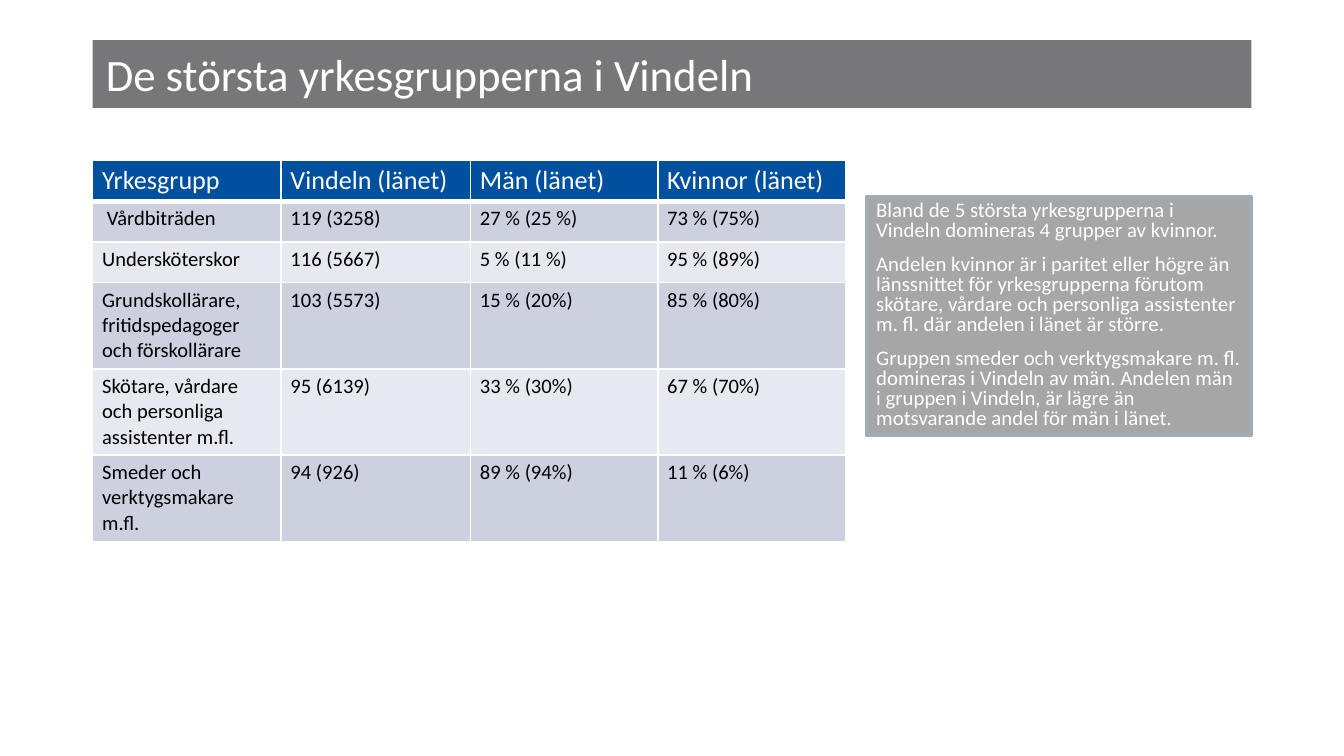
"""Build a slide on the largest occupational groups in Vindeln."""
from lxml import etree
from pptx import Presentation
from pptx.dml.color import RGBColor
from pptx.enum.shapes import MSO_SHAPE
from pptx.enum.text import MSO_ANCHOR, PP_ALIGN
from pptx.oxml.ns import qn
from pptx.util import Cm, Pt

RECTANGLE = MSO_SHAPE.RECTANGLE
TOP, MIDDLE = MSO_ANCHOR.TOP, MSO_ANCHOR.MIDDLE
LEFT_ALIGNED = PP_ALIGN.LEFT

WHITE = RGBColor(0xFF, 0xFF, 0xFF)
BLACK = RGBColor(0x00, 0x00, 0x00)
TITLE_GREY = RGBColor(0x77, 0x77, 0x7A)
NOTE_GREY = RGBColor(0xA6, 0xA6, 0xA6)
NOTE_EDGE = RGBColor(0xA3, 0xAB, 0xB6)
HEADER_BLUE = RGBColor(0x00, 0x50, 0xA0)
BANDS = [RGBColor(0xE7, 0xE9, 0xF0), RGBColor(0xCC, 0xD0, 0xDF)]
FONT = "Calibri"

TITLE = "De största yrkesgrupperna i Vindeln"
ROWS = [
    ("Yrkesgrupp", "Vindeln (länet)", "Män (länet)", "Kvinnor (länet)"),
    (" Vårdbiträden", "119 (3258)", "27 % (25 %)", "73 % (75%)"),
    ("Undersköterskor", "116 (5667)", "5 % (11 %)", "95 % (89%)"),
    ("Grundskollärare, fritidspedagoger och förskollärare",
     "103 (5573)", "15 % (20%)", "85 % (80%)"),
    ("Skötare, vårdare och personliga assistenter m.fl.",
     "95 (6139)", "33 % (30%)", "67 % (70%)"),
    ("Smeder och verktygsmakare m.fl.", "94 (926)", "89 % (94%)", "11 % (6%)"),
]
NOTES = [
    "Bland de 5 största yrkesgrupperna i Vindeln domineras 4 grupper av kvinnor.",
    "Andelen kvinnor är i paritet eller högre än länssnittet för yrkesgrupperna "
    "förutom skötare, vårdare och personliga assistenter m. fl. där andelen i "
    "länet är större.",
    "Gruppen smeder och verktygsmakare m. fl. domineras i Vindeln av män. "
    "Andelen män i gruppen i Vindeln, är lägre än motsvarande andel för män i länet.",
]

MARGIN, CONTENT_WIDTH = 1.75, 21.9
COLUMN_WIDTHS = [3.56, 3.58, 3.54, 3.56]
SHORT_ROW, TALL_ROW = 0.77, 1.63
ROW_HEIGHTS = [SHORT_ROW] * 3 + [TALL_ROW] * 3
NOTE_WIDTH = 7.27
INSET_X, INSET_Y = Cm(0.18), Cm(0.09)


def style_paragraph(paragraph, size, color):
    paragraph.alignment = LEFT_ALIGNED
    for span in paragraph.runs:
        span.font.name = FONT
        span.font.size = Pt(size)
        span.font.bold = False
        span.font.color.rgb = color


def set_insets(target):
    target.margin_left = target.margin_right = INSET_X
    target.margin_top = target.margin_bottom = INSET_Y


def add_panel(page, left, top, width, height, fill, anchor):
    panel = page.shapes.add_shape(RECTANGLE, Cm(left), Cm(top), Cm(width), Cm(height))
    panel.shadow.inherit = False
    panel.fill.solid()
    panel.fill.fore_color.rgb = fill
    panel.line.fill.background()
    panel.text_frame.word_wrap = True
    panel.text_frame.vertical_anchor = anchor
    return panel


def add_borders(cell, bottom_width):
    properties = cell._tc.get_or_add_tcPr()
    widths = {"a:lnL": 1, "a:lnR": 1, "a:lnT": 1, "a:lnB": bottom_width}
    for tag, width in widths.items():
        border = etree.SubElement(properties, qn(tag), w=str(Pt(width)))
        fill = etree.SubElement(border, qn("a:solidFill"))
        etree.SubElement(fill, qn("a:srgbClr"), val=str(WHITE))


def add_title(page):
    bar = add_panel(page, MARGIN, 0.76, CONTENT_WIDTH, 1.28, TITLE_GREY, MIDDLE)
    bar.text_frame.text = TITLE
    style_paragraph(bar.text_frame.paragraphs[0], 24, WHITE)


def add_group_table(page):
    table = page.shapes.add_table(
        len(ROWS), len(COLUMN_WIDTHS), Cm(MARGIN), Cm(3.02),
        Cm(sum(COLUMN_WIDTHS)), Cm(sum(ROW_HEIGHTS))).table
    for column, width in zip(table.columns, COLUMN_WIDTHS):
        column.width = Cm(width)
    for index, (row, height, texts) in enumerate(zip(table.rows, ROW_HEIGHTS, ROWS)):
        row.height = Cm(height)
        is_header = index == 0
        for cell, text in zip(row.cells, texts):
            add_borders(cell, 3 if is_header else 1)
            cell.fill.solid()
            cell.fill.fore_color.rgb = HEADER_BLUE if is_header else BANDS[index % 2]
            set_insets(cell)
            cell.text = text
            style_paragraph(cell.text_frame.paragraphs[0],
                            14 if is_header else 11, WHITE if is_header else BLACK)


def add_notes_panel(page):
    left = MARGIN + CONTENT_WIDTH - NOTE_WIDTH
    panel = add_panel(page, left, 3.73, NOTE_WIDTH, 4.5, NOTE_GREY, TOP)
    panel.line.color.rgb = NOTE_EDGE
    panel.line.width = Pt(2)
    set_insets(panel.text_frame)
    panel.text_frame.text = "\n".join(NOTES)
    for index, paragraph in enumerate(panel.text_frame.paragraphs):
        paragraph.line_spacing = 0.8
        paragraph.space_before = Pt(7.5 if index else 0)
        style_paragraph(paragraph, 11.1, WHITE)


def main():
    deck = Presentation()
    deck.slide_width, deck.slide_height = Cm(25.4), Cm(14.29)
    page = deck.slides.add_slide(deck.slide_layouts[6])
    add_title(page)
    add_group_table(page)
    add_notes_panel(page)
    deck.save("out.pptx")


if __name__ == "__main__":
    main()
